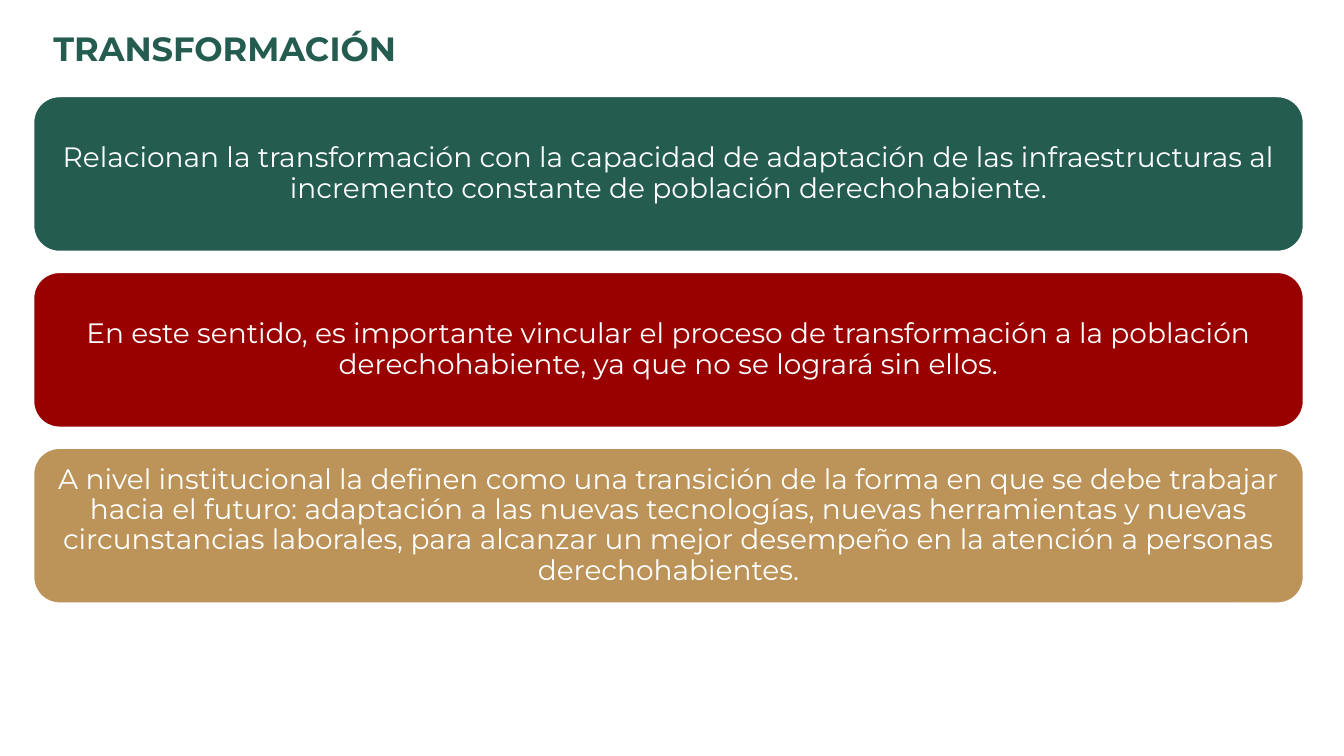
import pptx
import pptx.util
import pptx.dml.color
import pptx.enum.shapes
import pptx.enum.text
from dataclasses import dataclass

Pt = pptx.util.Pt
Rgb = pptx.dml.color.RGBColor.from_string
Align = pptx.enum.text.PP_ALIGN
Anchor = pptx.enum.text.MSO_ANCHOR

TITLE = "TRANSFORMACIÓN"
CARDS = [
    ("green", "Relacionan la transformación con la capacidad de adaptación de las "
     "infraestructuras al incremento constante de población derechohabiente."),
    ("red", "En este sentido, es importante vincular el proceso de transformación "
     "a la población derechohabiente, ya que no se logrará sin ellos."),
    ("gold", "A nivel institucional la definen como una transición de la forma en "
     "que se debe trabajar hacia el futuro: adaptación a las nuevas tecnologías, "
     "nuevas herramientas y nuevas circunstancias laborales, para alcanzar un "
     "mejor desempeño en la atención a personas derechohabientes."),
]


@dataclass(frozen=True)
class Theme:
    font: str = "Montserrat"
    head: int = 24
    body: int = 20
    green: str = "245C4F"
    red: str = "990000"
    gold: str = "BC945A"
    white: str = "FFFFFF"


LOOK = Theme()
LEFT, TOP, WIDTH, HEIGHT, GAP = 24, 69, 907, 110.6, 15
INSET = 11.5


def style(para, size, color, bold=False):
    font = para.runs[0].font
    font.name = LOOK.font
    font.size = Pt(size)
    font.bold = bold
    font.color.rgb = Rgb(color)


def add_title(slide):
    box = slide.shapes.add_textbox(Pt(31), Pt(16.6), Pt(621), Pt(36))
    frame = box.text_frame
    frame.word_wrap = True
    frame.text = TITLE
    style(frame.paragraphs[0], LOOK.head, LOOK.green, bold=True)


def add_card(slide, row, tone, text):
    top = TOP + row * (HEIGHT + GAP)
    card = slide.shapes.add_shape(
        pptx.enum.shapes.MSO_SHAPE.ROUNDED_RECTANGLE,
        Pt(LEFT), Pt(top), Pt(WIDTH), Pt(HEIGHT))
    card.shadow.inherit = False
    card.fill.solid()
    card.fill.fore_color.rgb = Rgb(getattr(LOOK, tone))
    card.line.color.rgb = Rgb(LOOK.white)
    card.line.width = Pt(1)
    frame = card.text_frame
    frame.word_wrap = True
    frame.vertical_anchor = Anchor.MIDDLE
    frame.margin_left = frame.margin_right = Pt(INSET - 5.4)
    frame.margin_top = frame.margin_bottom = Pt(INSET - 5.4)
    frame.text = text
    para = frame.paragraphs[0]
    para.alignment = Align.CENTER
    para.line_spacing = 0.9
    style(para, LOOK.body, LOOK.white)


def main():
    deck = pptx.Presentation()
    deck.slide_width, deck.slide_height = Pt(960), Pt(540)
    slide = deck.slides.add_slide(deck.slide_layouts[6])
    for row, (tone, text) in enumerate(CARDS):
        add_card(slide, row, tone, text)
    add_title(slide)
    deck.save("out.pptx")


if __name__ == "__main__":
    main()
